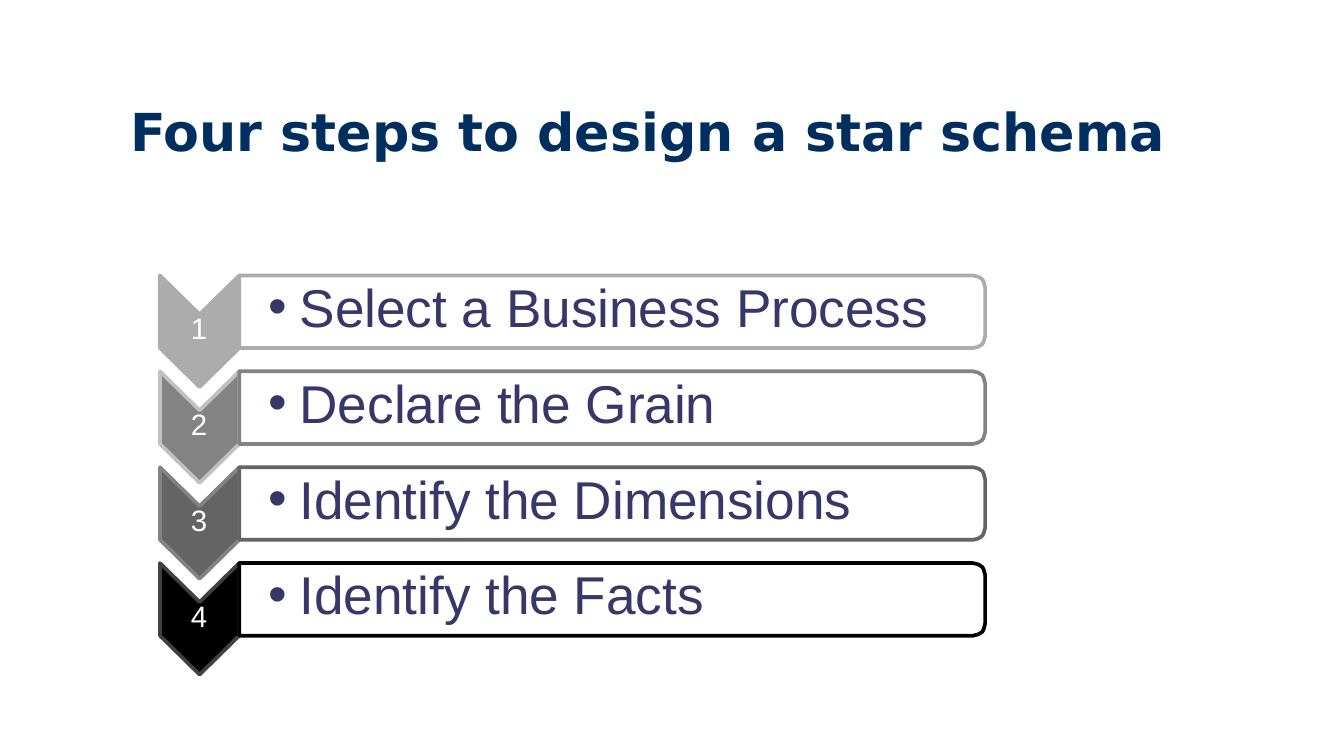
from dataclasses import dataclass

from lxml.etree import SubElement
from pptx import Presentation
from pptx.dml.color import RGBColor
from pptx.oxml.ns import qn
from pptx.util import Inches, Pt

NAVY = RGBColor(0x00, 0x2F, 0x5F)
INDIGO = RGBColor(0x37, 0x37, 0x69)
WHITE = RGBColor(0xFF, 0xFF, 0xFF)
BLACK = RGBColor(0x00, 0x00, 0x00)
CHARCOAL = RGBColor(0x41, 0x41, 0x41)
DARK_GREY = RGBColor(0x64, 0x64, 0x64)
MID_GREY = RGBColor(0x83, 0x83, 0x83)
LIGHT_GREY = RGBColor(0xAC, 0xAC, 0xAC)
PALE_GREY = RGBColor(0xC1, 0xC1, 0xC1)

SLIDE_WIDTH = 10
SLIDE_HEIGHT = SLIDE_WIDTH * 9 / 16
FIRST_TOP = 2.05
LAST_TOP = 4.19
ROW_HEIGHT = 0.54
CHEVRON_LEFT = 1.19
CHEVRON_RIGHT = 1.78
CHEVRON_POINT = 0.29
PANEL_RIGHT = 7.33


@dataclass
class Step:
    text: str
    text_width: float
    color: RGBColor
    chevron_outline: RGBColor


STEPS = [
    Step("Select a Business Process", 5.27, LIGHT_GREY, LIGHT_GREY),
    Step("Declare the Grain", 3.36, MID_GREY, PALE_GREY),
    Step("Identify the Dimensions", 4.37, DARK_GREY, MID_GREY),
    Step("Identify the Facts", 3.27, BLACK, CHARCOAL),
]
ROW_PITCH = (LAST_TOP - FIRST_TOP) / (len(STEPS) - 1)


def add_outline(slide, points: list[tuple[float, float]], fill: RGBColor, line: RGBColor):
    """Draw a closed polygon through points given in inches."""
    corners = [(Inches(x), Inches(y)) for x, y in points]
    builder = slide.shapes.build_freeform(*corners[0], scale=1.0)
    builder.add_line_segments(corners[1:], close=True)
    shape = builder.convert_to_shape()
    shape.shadow.inherit = False
    shape.fill.solid()
    shape.fill.fore_color.rgb = fill
    shape.line.color.rgb = line
    shape.line.width = Pt(1.98)
    return shape


def add_text(slide, text: str, left: float, top: float, width: float, height: float,
             font_name: str, size: float, color: RGBColor,
             side_inset: float = 0, top_inset: float = 0):
    """Add a one-paragraph text box and return its paragraph."""
    box = slide.shapes.add_textbox(Inches(left), Inches(top), Inches(width), Inches(height))
    frame = box.text_frame
    frame.word_wrap = True
    frame.margin_left = frame.margin_right = Inches(side_inset)
    frame.margin_top = Inches(top_inset)
    frame.margin_bottom = 0
    frame.text = text
    paragraph = frame.paragraphs[0]
    font = paragraph.runs[0].font
    font.name = font_name
    font.size = Pt(size)
    font.color.rgb = color
    return paragraph


def add_bullet(paragraph) -> None:
    properties = paragraph._p.get_or_add_pPr()
    properties.set("marL", str(Inches(0.24)))
    properties.set("indent", str(Inches(-0.23)))
    SubElement(properties, qn("a:buFont"), typeface="Arial")
    SubElement(properties, qn("a:buChar"), char="•")


def add_chevron(slide, top: float, step: Step) -> None:
    middle = (CHEVRON_LEFT + CHEVRON_RIGHT) / 2
    bottom = top + ROW_HEIGHT
    points = [
        (CHEVRON_LEFT, top), (middle, top + CHEVRON_POINT), (CHEVRON_RIGHT, top),
        (CHEVRON_RIGHT, bottom), (middle, bottom + CHEVRON_POINT), (CHEVRON_LEFT, bottom),
    ]
    add_outline(slide, points, step.color, step.chevron_outline)


def add_panel(slide, top: float, step: Step) -> None:
    """Draw the white panel, whose right corners are rounded."""
    corner = [(0.09, 0), (0.05, 0.01), (0.02, 0.03), (0.01, 0.05), (0, 0.09)]
    bottom = top + ROW_HEIGHT
    upper = [(PANEL_RIGHT - x, top + y) for x, y in corner]
    lower = [(PANEL_RIGHT - x, bottom - y) for x, y in reversed(corner)]
    points = [(CHEVRON_RIGHT, top), *upper, *lower, (CHEVRON_RIGHT, bottom)]
    add_outline(slide, points, WHITE, step.color)


def add_step(slide, number: int, step: Step) -> None:
    top = FIRST_TOP + (number - 1) * ROW_PITCH
    add_chevron(slide, top, step)
    add_text(slide, str(number), 1.42, top + 0.26, 0.14, 0.27, "Arial", 15.8, WHITE)
    add_panel(slide, top, step)
    paragraph = add_text(slide, step.text, 1.99, top - 0.01, step.text_width, 0.48,
                         "Arial", 28.5, INDIGO)
    add_bullet(paragraph)


def main() -> None:
    presentation = Presentation()
    presentation.slide_width = Inches(SLIDE_WIDTH)
    presentation.slide_height = Inches(SLIDE_HEIGHT)
    slide = presentation.slides.add_slide(presentation.slide_layouts[6])

    title = add_text(slide, "Four steps to design a star schema", 0.87, 0.69, 8.76, 0.65,
                     "DejaVu Sans", 28, NAVY, side_inset=0.1, top_inset=0.05)
    title.runs[0].font.bold = True

    for number, step in enumerate(STEPS, start=1):
        add_step(slide, number, step)

    presentation.save("out.pptx")


if __name__ == "__main__":
    main()
